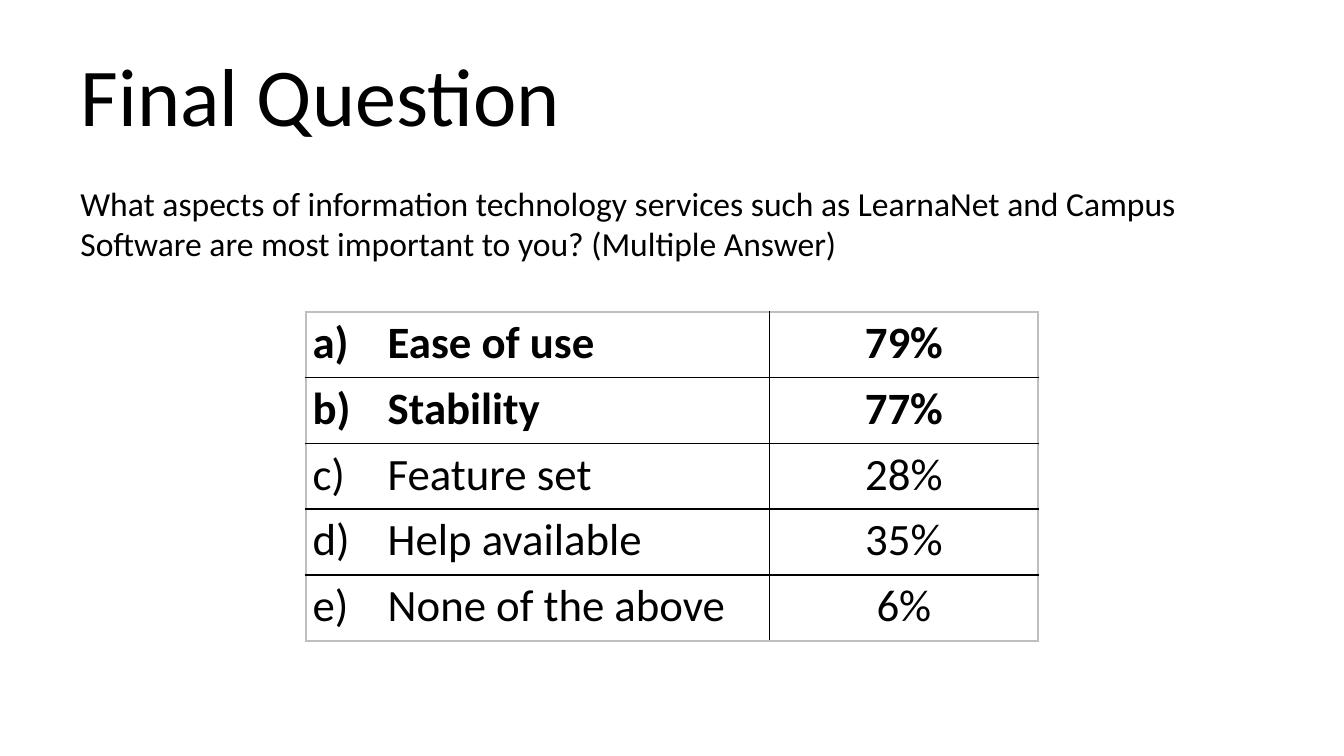
from lxml.etree import SubElement
from pptx import Presentation
from pptx.dml.color import RGBColor
from pptx.enum.text import MSO_ANCHOR, PP_ALIGN
from pptx.oxml import parse_xml
from pptx.oxml.ns import nsdecls, qn
from pptx.util import Inches, Pt

FONT = "Calibri"
COLORS = {"text": "000000", "inner": "000000", "outer": "BFBFBF"}
SLIDE_W = 10
SLIDE_H = SLIDE_W * 9 / 16
MARGIN = 0.5
CONTENT_W = SLIDE_W - 2 * MARGIN
COL_WIDTHS, ROW_H = (3.45, 2), 0.49
TABLE_W = sum(COL_WIDTHS)
TABLE_LEFT, TABLE_TOP = (SLIDE_W - TABLE_W) / 2, 2.32
INDENT = 0.56
QUESTION = ("What aspects of information technology services such as LearnaNet "
            "and Campus Software are most important to you? (Multiple Answer)")
ANSWERS = [
    ("Ease of use", "79%"),
    ("Stability", "77%"),
    ("Feature set", "28%"),
    ("Help available", "35%"),
    ("None of the above", "6%"),
]
TOP_ANSWERS = 2


def write(tf, text, size, bold=False, align=PP_ALIGN.LEFT):
    """Set the text of a frame as one formatted paragraph and return it."""
    tf.text = text
    tf.word_wrap = True
    p = tf.paragraphs[0]
    p.alignment = align
    font = p.runs[0].font
    font.name, font.size, font.bold = FONT, Pt(size), bold
    font.color.rgb = RGBColor.from_string(COLORS["text"])
    return p


def number(p, start):
    """Give a paragraph a lettered label with a hanging indent."""
    pPr = p._p.get_or_add_pPr()
    pPr.set("marL", str(Inches(INDENT)))
    pPr.set("indent", str(-Inches(INDENT)))
    SubElement(pPr, qn("a:buFont"), typeface="+mj-lt")
    SubElement(pPr, qn("a:buAutoNum"), type="alphaLcParenR", startAt=str(start))


def set_borders(cell, edges):
    """Draw 1 pt cell borders, grey on outer edges and black inside."""
    tcPr = cell._tc.get_or_add_tcPr()
    for i, (side, is_outer) in enumerate(edges.items()):
        color = COLORS["outer" if is_outer else "inner"]
        tcPr.insert(i, parse_xml(
            f'<a:ln{side} {nsdecls("a")} w="{Pt(1)}"><a:solidFill>'
            f'<a:srgbClr val="{color}"/></a:solidFill></a:ln{side}>'))


def add_title(s, text):
    """Place and fill the title placeholder."""
    sp = s.shapes.title
    sp.left, sp.top = Inches(MARGIN), Inches(0.23)
    sp.width, sp.height = Inches(CONTENT_W), Inches(0.94)
    sp.text_frame.vertical_anchor = MSO_ANCHOR.MIDDLE
    write(sp.text_frame, text, 44)


def add_question(s, text):
    """Add the question below the title."""
    sp = s.shapes.add_textbox(Inches(MARGIN), Inches(1.31),
                              Inches(CONTENT_W), Inches(3.71))
    write(sp.text_frame, text, 18)


def add_answers(s, answers):
    """Add the table of lettered answers and their shares."""
    rows, cols = len(answers), len(COL_WIDTHS)
    table = s.shapes.add_table(
        rows, cols, Inches(TABLE_LEFT), Inches(TABLE_TOP),
        Inches(TABLE_W), Inches(ROW_H * rows)).table
    table.first_row = table.horz_banding = False
    for column, width in zip(table.columns, COL_WIDTHS):
        column.width = Inches(width)
    for r, answer in enumerate(answers):
        table.rows[r].height = Inches(ROW_H)
        for c, text in enumerate(answer):
            cell = table.cell(r, c)
            cell.margin_left = cell.margin_right = Inches(0.05)
            cell.margin_top = cell.margin_bottom = Inches(0.03)
            cell.fill.background()
            set_borders(cell, {"L": c == 0, "R": c == cols - 1,
                               "T": r == 0, "B": r == rows - 1})
            align = PP_ALIGN.CENTER if c else PP_ALIGN.LEFT
            p = write(cell.text_frame, text, 24, r < TOP_ANSWERS, align)
            if c == 0:
                number(p, r + 1)


def main():
    """Build and save the slide."""
    prs = Presentation()
    prs.slide_width, prs.slide_height = Inches(SLIDE_W), Inches(SLIDE_H)
    s = prs.slides.add_slide(prs.slide_layouts[5])
    add_title(s, "Final Question")
    add_question(s, QUESTION)
    add_answers(s, ANSWERS)
    prs.save("out.pptx")


if __name__ == "__main__":
    main()
